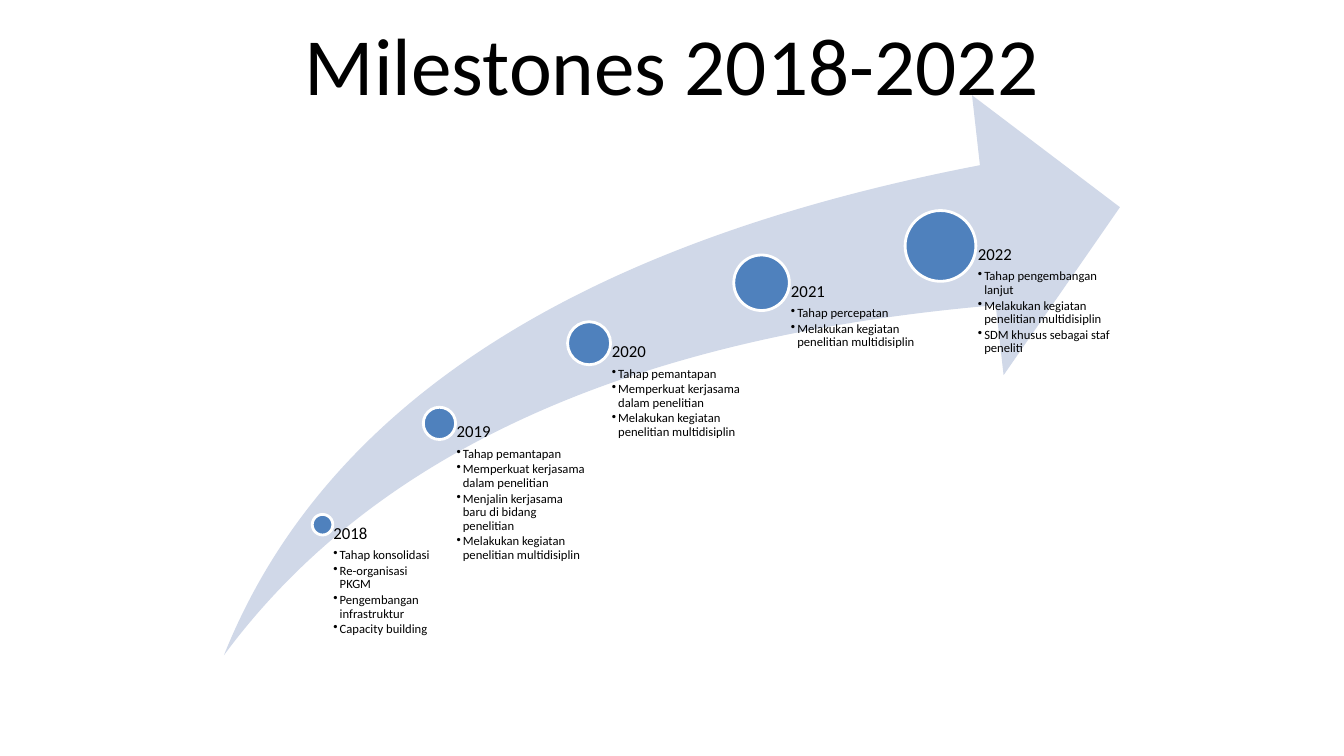
from lxml import etree
from pptx import Presentation
from pptx.dml.color import RGBColor
from pptx.enum import shapes, text
from pptx.oxml import ns
from pptx.util import Pt

TITLE = "Milestones 2018-2022"
JOINT = "Melakukan kegiatan penelitian multidisiplin"
FIRM = "Tahap pemantapan"
TIES = "Memperkuat kerjasama dalam penelitian"

# year, dot centre x, dot centre y, dot size, text width, tasks
STEPS = [
    ("2018", 230.4, 374.8, 14.72, 83.5,
     ["Tahap konsolidasi", "Re-organisasi PKGM",
      "Pengembangan infrastruktur", "Capacity building"]),
    ("2019", 313.9, 302.4, 23.04, 106.5,
     [FIRM, TIES, "Menjalin kerjasama baru di bidang penelitian", JOINT]),
    ("2020", 420.8, 245.2, 30.72, 124, [FIRM, TIES, JOINT]),
    ("2021", 544, 202, 39.68, 128, ["Tahap percepatan", JOINT]),
    ("2022", 671.8, 175.7, 50.56, 128,
     ["Tahap pengembangan lanjut", JOINT, "SDM khusus sebagai staf peneliti"]),
]

FONT = "Calibri"
BLACK = RGBColor(0, 0, 0)
WHITE = RGBColor(0xFF, 0xFF, 0xFF)
BLUE = RGBColor(0x4F, 0x81, 0xBD)
PALE = RGBColor(0xD0, 0xD8, 0xE8)
BASE = 470  # common bottom of the text columns
HANG = 4.5  # bullet indent


def add_text(slide, box, lines, inset=0, anchor=text.MSO_ANCHOR.TOP,
             align=text.PP_ALIGN.LEFT, spacing=0.9):
    """Add a text box; each line is (words, size, space after, bulleted)."""
    frame = slide.shapes.add_textbox(*map(Pt, box)).text_frame
    frame.word_wrap = True
    frame.vertical_anchor = anchor
    frame.margin_left = Pt(inset)
    frame.margin_top = frame.margin_right = frame.margin_bottom = 0
    for i, (words, size, after, dotted) in enumerate(lines):
        para = frame.add_paragraph() if i else frame.paragraphs[0]
        if dotted:
            props = para._p.get_or_add_pPr()
            props.set("marL", str(Pt(HANG)))
            props.set("indent", str(-Pt(HANG)))
            etree.SubElement(props, ns.qn("a:buChar")).set("char", "•")
        para.alignment = align
        para.line_spacing = spacing
        para.space_after = Pt(after)
        run = para.add_run()
        run.text = words
        run.font.name = FONT
        run.font.size = Pt(size)
        run.font.color.rgb = BLACK


def add_form(slide, kind, box, fill, edge=None):
    form = slide.shapes.add_shape(kind, *map(Pt, box))
    form.shadow.inherit = False
    form.fill.solid()
    form.fill.fore_color.rgb = fill
    if edge is None:
        form.line.fill.background()
    else:
        form.line.color.rgb = edge
        form.line.width = Pt(2)
    return form


def main():
    deck = Presentation()
    deck.slide_width, deck.slide_height = Pt(960), Pt(540)
    slide = deck.slides.add_slide(deck.slide_layouts[6])

    add_text(slide, (48, 0, 864, 90), [(TITLE, 58, 0, False)],
             anchor=text.MSO_ANCHOR.MIDDLE, align=text.PP_ALIGN.CENTER,
             spacing=1.0)
    arrow = add_form(slide, shapes.MSO_SHAPE.SWOOSH_ARROW,
                     (160, 68, 640, 400), PALE)
    arrow.adjustments[0] = arrow.adjustments[1] = 0.25

    for year, x, y, size, width, tasks in STEPS:
        add_form(slide, shapes.MSO_SHAPE.OVAL,
                 (x - size / 2, y - size / 2, size, size), BLUE, WHITE)
        lines = [(year, 12, 4.2, False)]
        lines += [(task, 9, 1.35, True) for task in tasks]
        add_text(slide, (x, y, width, BASE - y), lines, inset=0.53 * size)

    deck.save("out.pptx")


if __name__ == "__main__":
    main()
